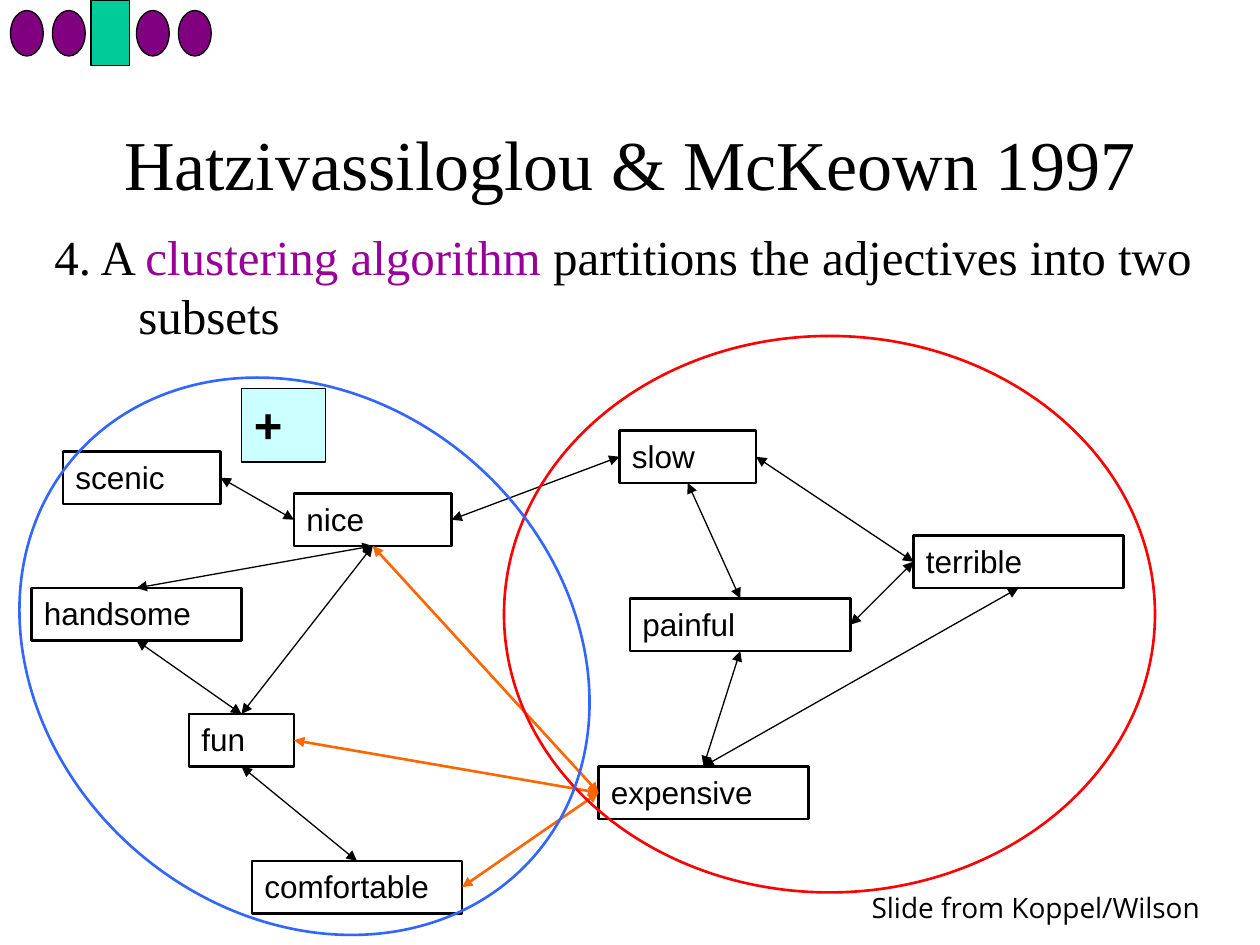
import pptx
import pptx.util
import pptx.dml.color
import pptx.enum.shapes
import pptx.enum.text
import pptx.oxml
import pptx.oxml.ns
from lxml import etree

Pt = pptx.util.Pt
KIND = pptx.enum.shapes.MSO_SHAPE
ALIGN = pptx.enum.text.PP_ALIGN
ANCHOR = pptx.enum.text.MSO_ANCHOR

HUES = {
    "black": "000000", "violet": "990099", "purple": "800080",
    "green": "00CC99", "cyan": "CCFFFF", "orange": "FF6600",
    "red": "FF0000", "blue": "3366FF",
}
SERIF, SANS, NOTE = "Times New Roman", "Arial", "Open Sans"
TOP, LEFT, BASE, RIGHT = range(4)

# word: left, top, width
WORDS = {
    "nice": (168, 282, 90), "handsome": (18, 336, 120),
    "terrible": (522, 306, 120), "comfortable": (144, 492, 120),
    "painful": (360, 342, 126), "expensive": (342, 438, 120),
    "fun": (108, 408, 60), "scenic": (36, 258, 90), "slow": (354, 246, 78),
}
# from word and side, to word and side
SAME = [
    ("nice", BASE, "handsome", TOP), ("terrible", LEFT, "painful", RIGHT),
    ("terrible", BASE, "expensive", TOP), ("handsome", BASE, "fun", TOP),
    ("comfortable", TOP, "fun", BASE), ("nice", BASE, "fun", TOP),
    ("scenic", RIGHT, "nice", LEFT), ("painful", BASE, "expensive", TOP),
    ("nice", RIGHT, "slow", LEFT), ("slow", BASE, "painful", TOP),
    ("terrible", LEFT, "slow", RIGHT),
]
CROSS = [
    ("comfortable", RIGHT, "expensive", LEFT),
    ("nice", BASE, "expensive", LEFT), ("fun", RIGHT, "expensive", LEFT),
]


def tint(name):
    return pptx.dml.color.RGBColor.from_string(HUES[name])


def apply(item, form):
    for key, value in form.items():
        setattr(item, key, value)


def write(shape, runs, face, size, bold=False, align=ALIGN.LEFT,
          anchor=ANCHOR.TOP):
    """Fill a shape with one paragraph of (text, colour) runs."""
    frame = shape.text_frame
    apply(frame, {"word_wrap": True, "vertical_anchor": anchor})
    para = frame.paragraphs[0]
    para.alignment = align
    for text, hue in runs:
        run = para.add_run()
        run.text = text
        apply(run.font, {"name": face, "size": Pt(size), "bold": bold})
        run.font.color.rgb = tint(hue)
    return para


def label(slide, area, runs, face, size, **form):
    box = slide.shapes.add_textbox(*map(Pt, area))
    return write(box, runs, face, size, **form)


def draw(shapes, kind, area, line="black", width=0.75, fill=None):
    shape = shapes.add_shape(kind, *map(Pt, area))
    shape.shadow.inherit = False
    shape.line.color.rgb = tint(line)
    shape.line.width = Pt(width)
    if fill:
        shape.fill.solid()
        shape.fill.fore_color.rgb = tint(fill)
    else:
        shape.fill.background()
    return shape


def link(slide, boxes, ends, hue, width):
    """Join two word boxes with a double-headed arrow."""
    start, out, stop, into = ends
    line = slide.shapes.add_connector(
        pptx.enum.shapes.MSO_CONNECTOR.STRAIGHT, 0, 0, 0, 0)
    line.begin_connect(boxes[start], out)
    line.end_connect(boxes[stop], into)
    line.line.color.rgb = tint(hue)
    line.line.width = Pt(width)
    stroke = line.line._get_or_add_ln()
    for tag in ("a:headEnd", "a:tailEnd"):
        etree.SubElement(stroke, pptx.oxml.ns.qn(tag), type="triangle")
    etree.SubElement(line._element.spPr, pptx.oxml.ns.qn("a:effectLst"))


def badge(slide):
    """Row of four dots with a block in the middle."""
    group = slide.shapes.add_group_shape()
    for step in (0, 1, 3, 4):
        draw(group.shapes, KIND.OVAL, (6 + 24 * step, 6, 18.7, 26),
             fill="purple")
    draw(group.shapes, KIND.RECTANGLE, (52, 0, 22, 37.5), fill="green")


def main():
    deck = pptx.Presentation()
    apply(deck, {"slide_width": Pt(720), "slide_height": Pt(540)})
    slide = deck.slides.add_slide(deck.slide_layouts[6])

    # Title and statement
    label(slide, (54, 48, 612, 90),
          [("Hatzivassiloglou & McKeown 1997", "black")], SERIF, 40,
          align=ALIGN.CENTER, anchor=ANCHOR.MIDDLE)
    para = label(slide, (24, 126, 672, 132), [
        ("4. A ", "black"), ("clustering algorithm", "violet"),
        (" partitions the adjectives into two subsets", "black")], SERIF, 28)
    props = para._p.get_or_add_pPr()
    props.set("marL", str(Pt(48)))
    props.set("indent", str(Pt(-48)))

    # Word graph
    boxes = {}
    for word, (left, top, width) in WORDS.items():
        boxes[word] = draw(slide.shapes, KIND.RECTANGLE,
                           (left, top, width, 30), width=1.5)
        write(boxes[word], [(word, "black")], SANS, 18)
    for ends in SAME:
        link(slide, boxes, ends, "black", 0.75)
    for ends in CROSS:
        link(slide, boxes, ends, "orange", 1.5)

    # Two clusters and the plus sign
    draw(slide.shapes, KIND.OVAL, (288, 192, 372, 318), "red", 1.5)
    ring = draw(slide.shapes, KIND.OVAL, (27, 201, 294, 348), "blue", 1.5)
    ring.rotation = 311.1
    plus = draw(slide.shapes, KIND.RECTANGLE, (138, 222, 48, 42), fill="cyan")
    write(plus, [("+", "black")], SANS, 28, bold=True)

    # Corner badge and credit
    badge(slide)
    label(slide, (491, 505.5, 229, 27),
          [("Slide from Koppel/Wilson", "black")], NOTE, 16)

    deck.save("out.pptx")


if __name__ == "__main__":
    main()
